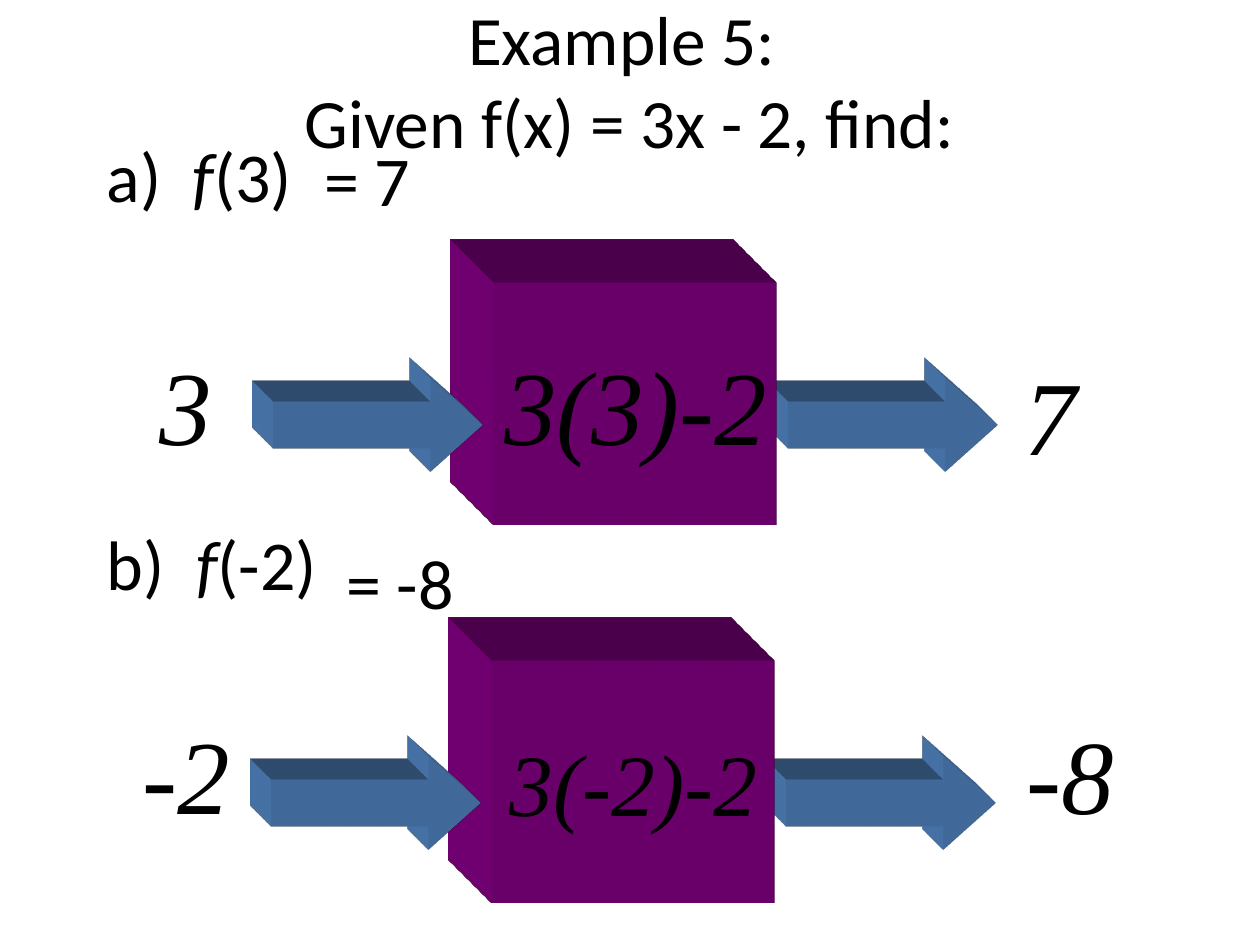
import lxml.etree
import pptx
import pptx.dml.color
import pptx.enum.shapes
import pptx.enum.text
import pptx.oxml
import pptx.oxml.ns
import pptx.util

KIND = pptx.enum.shapes.MSO_SHAPE
FIT = pptx.enum.text.MSO_AUTO_SIZE
ALIGN = pptx.enum.text.PP_ALIGN
MID = pptx.enum.text.MSO_ANCHOR.MIDDLE
SCALE = 914400 / 126


def emu(px):
    return pptx.util.Emu(round(px * SCALE))


def color(code):
    return pptx.dml.color.RGBColor.from_string(code)


class Deck:
    """Hold the style and the current slide, and draw each kind of element."""

    sans = "Calibri"
    serif = "Times New Roman"
    ink = "000000"
    blue = "4F81BD"
    plum = "800080"

    def __init__(self):
        self.file = pptx.Presentation()
        self.file.slide_width, self.file.slide_height = emu(1260), emu(945)
        self.slide = self.file.slides.add_slide(self.file.slide_layouts[1])

    def run(self, para, text, size, font, slant=False):
        run = para.add_run()
        run.text = text
        run.font.size = pptx.util.Pt(size)
        run.font.name = font
        run.font.italic = slant
        run.font.color.rgb = color(self.ink)

    def place(self, shape, x, y, w, h):
        shape.left, shape.top = emu(x), emu(y)
        shape.width, shape.height = emu(w), emu(h)
        shape.text_frame.auto_size = FIT.NONE

    def title(self, lines, x, y, w, h):
        shape = self.slide.shapes.title
        self.place(shape, x, y, w, h)
        shape.text_frame.vertical_anchor = MID
        para = shape.text_frame.paragraphs[0]
        para.alignment = ALIGN.CENTER
        for i, line in enumerate(lines):
            if i:
                para.add_line_break()
            self.run(para, line, 39.6, self.sans)

    def items(self, rows, gap, x, y, w, h):
        shape = self.slide.placeholders[1]
        self.place(shape, x, y, w, h)
        frame = shape.text_frame
        for i, (mark, arg) in enumerate(rows):
            para = frame.add_paragraph() if i else frame.paragraphs[0]
            if i:
                para.space_before = pptx.util.Pt(gap)
            props = para._p.get_or_add_pPr()
            props.set("marL", str(emu(48)))
            props.set("indent", str(-emu(48)))
            lxml.etree.SubElement(props, pptx.oxml.ns.qn("a:buNone"))
            self.run(para, mark, 40, self.sans)
            self.run(para, "f", 40, self.sans, True)
            self.run(para, arg, 40, self.sans)

    def solid(self, kind, fill, depth, x, y, w, h):
        shape = self.slide.shapes.add_shape(kind, emu(x), emu(y), emu(w), emu(h))
        shape.shadow.inherit = False
        shape.fill.solid()
        shape.fill.fore_color.rgb = color(fill)
        shape.line.fill.background()
        space = pptx.oxml.ns.nsdecls("a")
        for xml in (
            f'<a:scene3d {space}><a:camera prst="legacyObliqueTopLeft"/>'
            '<a:lightRig rig="legacyFlat3" dir="b"/></a:scene3d>',
            f'<a:sp3d {space} extrusionH="{depth}" prstMaterial="legacyMatte">'
            '<a:bevelT w="13500" h="13500" prst="angle"/>'
            '<a:bevelB w="13500" h="13500" prst="angle"/>'
            f'<a:extrusionClr><a:srgbClr val="{fill}"/></a:extrusionClr></a:sp3d>',
        ):
            shape._element.spPr.append(pptx.oxml.parse_xml(xml))
        return shape

    def arrow(self, x, y):
        shape = self.solid(KIND.RIGHT_ARROW, self.blue, 430200, x, y, 210, 94)
        shape.adjustments[1] = 0.56

    def box(self, text, size, x, y):
        shape = self.solid(KIND.RECTANGLE, self.plum, 887400, x, y, 283, 242)
        frame = shape.text_frame
        frame.word_wrap = False
        frame.vertical_anchor = MID
        para = frame.paragraphs[0]
        para.alignment = ALIGN.CENTER
        self.run(para, text, size, self.serif, True)

    def label(self, text, x, y, w, h, wrap=False, math=True):
        shape = self.slide.shapes.add_textbox(emu(x), emu(y), emu(w), emu(h))
        frame = shape.text_frame
        frame.word_wrap = wrap
        frame.auto_size = FIT.SHAPE_TO_FIT_TEXT
        para = frame.paragraphs[0]
        para.alignment = ALIGN.CENTER if math else ALIGN.LEFT
        size, font = (60, self.serif) if math else (40, self.sans)
        self.run(para, text, size, font, math)


def main():
    deck = Deck()
    deck.title(["Example 5: ", "Given f(x) = 3x - 2, find:"], 94, 0, 1071, 158)
    deck.items([("a)  ", "(3)"), ("b)  ", "(-2)")], 174, 94, 126, 1071, 500)
    rows = [
        (0, 0, "3(3)-2", 60, ("3", 147, 334, 78), ("7", 989, 344, 123)),
        (-2, 378, "3(-2)-2", 50, ("-2", 130, 703, 113), ("-8", 1009, 703, 123)),
    ]
    for dx, dy, rule, size, left, right in rows:
        deck.arrow(788 + dx, 378 + dy)
        deck.box(rule, size, 494 + dx, 283 + dy)
        deck.label(*left, 139)
        deck.label(*right, 139, wrap=True)
        deck.arrow(273 + dx, 378 + dy)
    deck.label("= 7", 312, 130, 117, 97, math=False)
    deck.label("= -8", 334, 533, 141, 97, math=False)
    deck.file.save("out.pptx")


if __name__ == "__main__":
    main()
